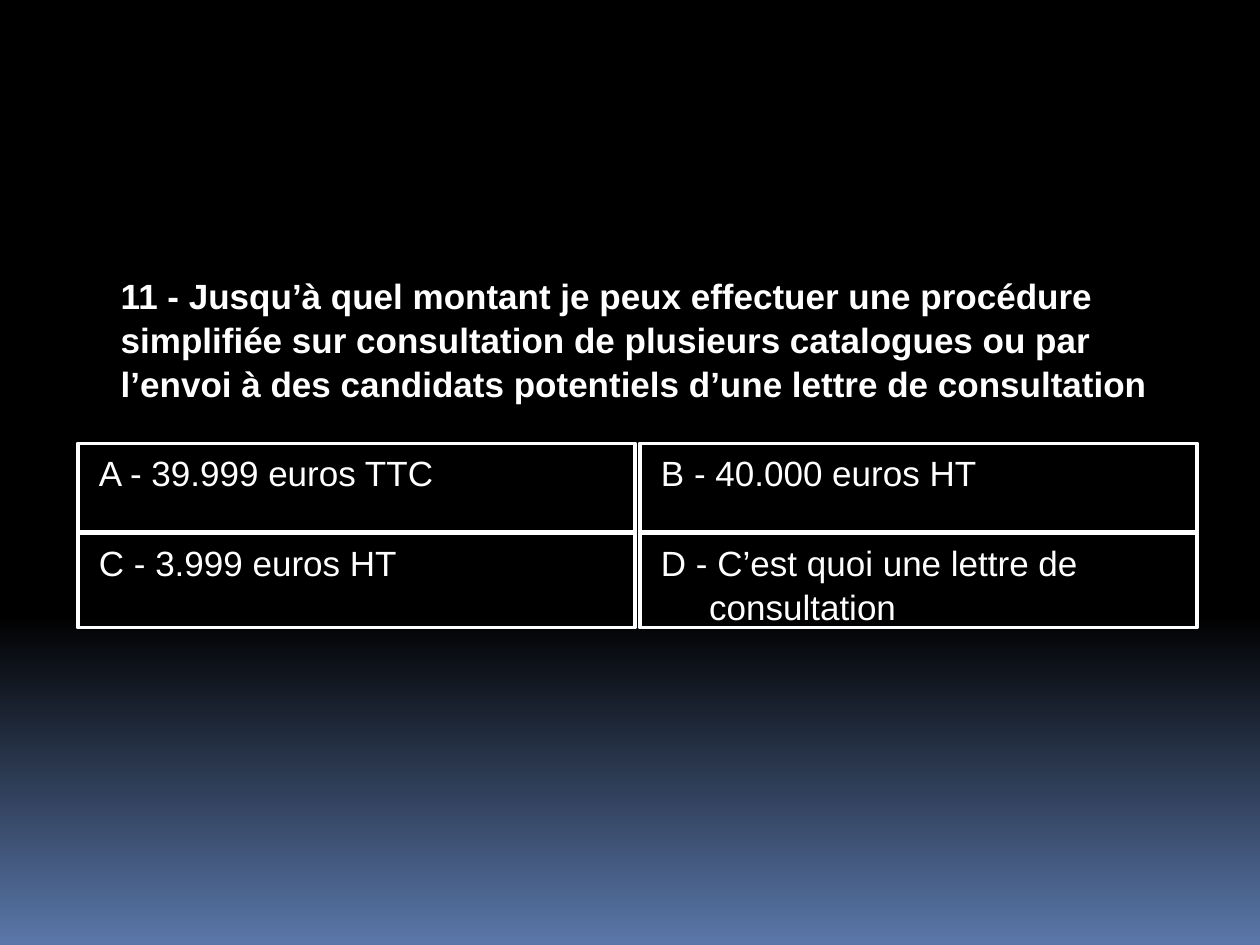
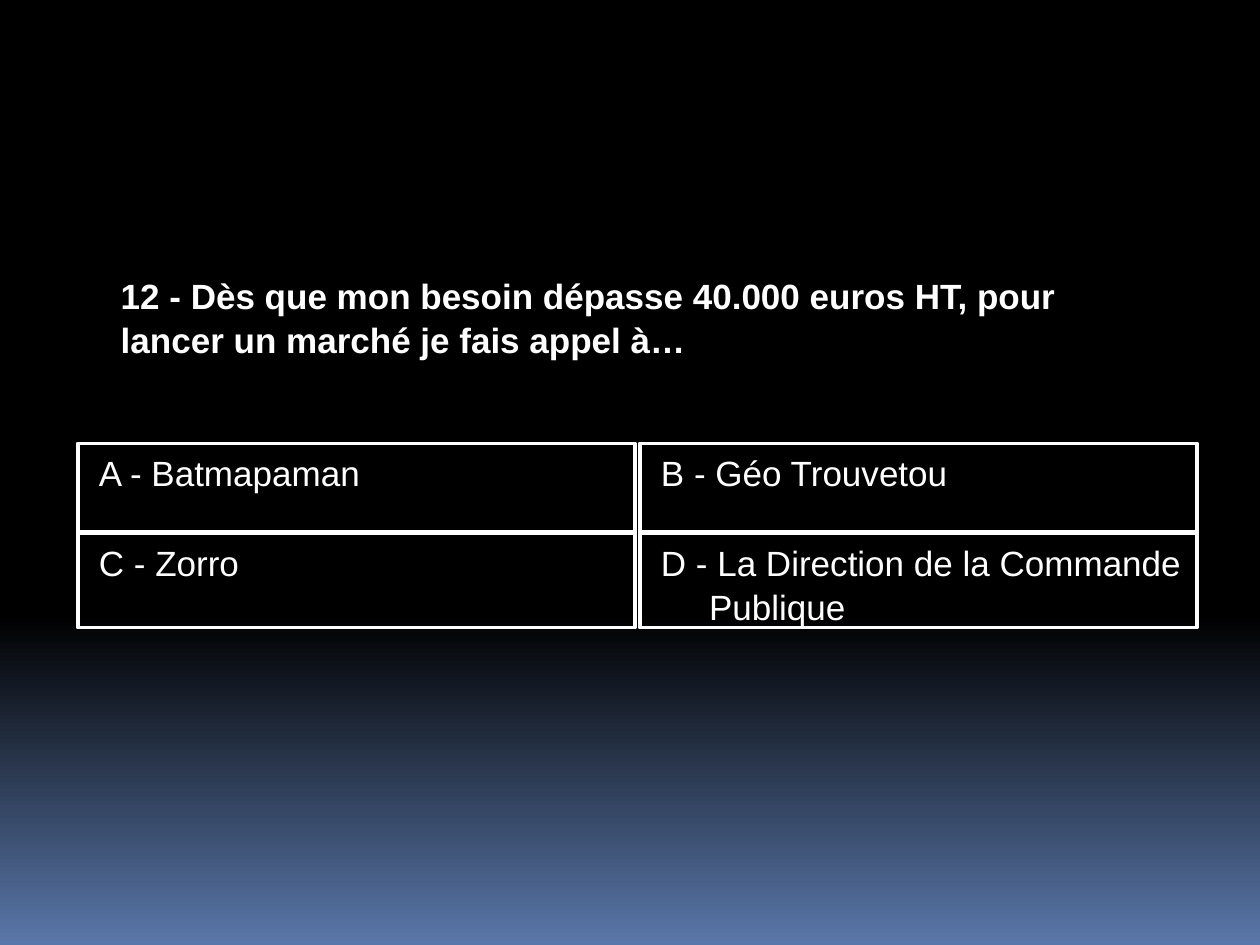
from lxml import etree
from pptx import Presentation
from pptx.dml.color import RGBColor
from pptx.enum.text import MSO_ANCHOR, MSO_AUTO_SIZE, PP_ALIGN
from pptx.oxml.ns import qn
from pptx.util import Cm, Pt

TOP = MSO_ANCHOR.TOP
NO_FIT = MSO_AUTO_SIZE.NONE
LEFT = PP_ALIGN.LEFT
COMPARISON_LAYOUT = 4

BLACK, BLUE, WHITE = "000000", "5A77A9", "FFFFFF"
COLUMN_LEFTS = (1.57, 12.9)
COLUMN_WIDTH = 11.23
ROWS = ((8.94, 1.78), (10.74, 1.91))

QUESTIONS = (
    (
        "11 - Jusqu’à quel montant je peux effectuer une procédure simplifiée sur "
        "consultation de plusieurs catalogues ou par l’envoi à des candidats "
        "potentiels d’une lettre de consultation",
        (
            "A - 39.999 euros TTC",
            "B - 40.000 euros HT",
            "C - 3.999 euros HT",
            "D - C’est quoi une lettre de consultation",
        ),
    ),
    (
        "12 - Dès que mon besoin dépasse 40.000 euros HT, pour lancer un marché "
        "je fais appel à…",
        (
            "A - Batmapaman",
            "B - Géo Trouvetou",
            "C - Zorro",
            "D - La Direction de la Commande Publique",
        ),
    ),
)


def color(value):
    return RGBColor.from_string(value)


class Quiz:
    """Holds the quiz style and the page being filled."""

    def __init__(self):
        self.deck = Presentation()
        self.deck.slide_width, self.deck.slide_height = Cm(25.4), Cm(19.05)
        self.page = None
        self.paint_background()

    def paint_background(self):
        fill = self.deck.slide_master.background.fill
        fill.gradient()
        fill.gradient_angle = 270
        stops = ((0.65, BLACK), (1, BLUE))
        for stop, (position, value) in zip(fill.gradient_stops, stops):
            stop.position = position
            stop.color.rgb = color(value)

    def add_page(self):
        layout = self.deck.slide_layouts[COMPARISON_LAYOUT]
        self.page = self.deck.slides.add_slide(layout)

    def fill_box(self, box, text, place, bold):
        box.left, box.top, box.width, box.height = map(Cm, place)
        frame = box.text_frame
        frame.text = text
        frame.word_wrap = True
        frame.auto_size = NO_FIT
        frame.vertical_anchor = TOP
        para = frame.paragraphs[0]
        para.alignment = LEFT
        para.line_spacing = 1.05
        para.font.name = "Arial"
        para.font.size = Pt(20)
        para.font.bold = bold
        para.font.color.rgb = color(WHITE)
        return para

    def add_question(self, text):
        self.fill_box(self.page.shapes.title, text, (2.18, 5.36, 21.59, 2.16), True)

    def add_answer(self, box, text, place):
        para = self.fill_box(box, text, place, False)
        para.space_before = Pt(7)
        box.fill.background()
        box.line.color.rgb = color(WHITE)
        box.line.width = Pt(2.25)
        properties = para._p.get_or_add_pPr()
        properties.set("marL", str(Cm(1.14)))
        properties.set("indent", str(Cm(-0.97)))
        no_bullet = etree.Element(qn("a:buNone"))
        properties.find(qn("a:defRPr")).addprevious(no_bullet)

    def add_answers(self, answers):
        places = [
            (left, top, COLUMN_WIDTH, height)
            for top, height in ROWS
            for left in COLUMN_LEFTS
        ]
        boxes = list(self.page.placeholders)[1:]
        for box, text, place in zip(boxes, answers, places):
            self.add_answer(box, text, place)


def main():
    quiz = Quiz()
    for question, answers in QUESTIONS:
        quiz.add_page()
        quiz.add_question(question)
        quiz.add_answers(answers)
    quiz.deck.save("out.pptx")


if __name__ == "__main__":
    main()
